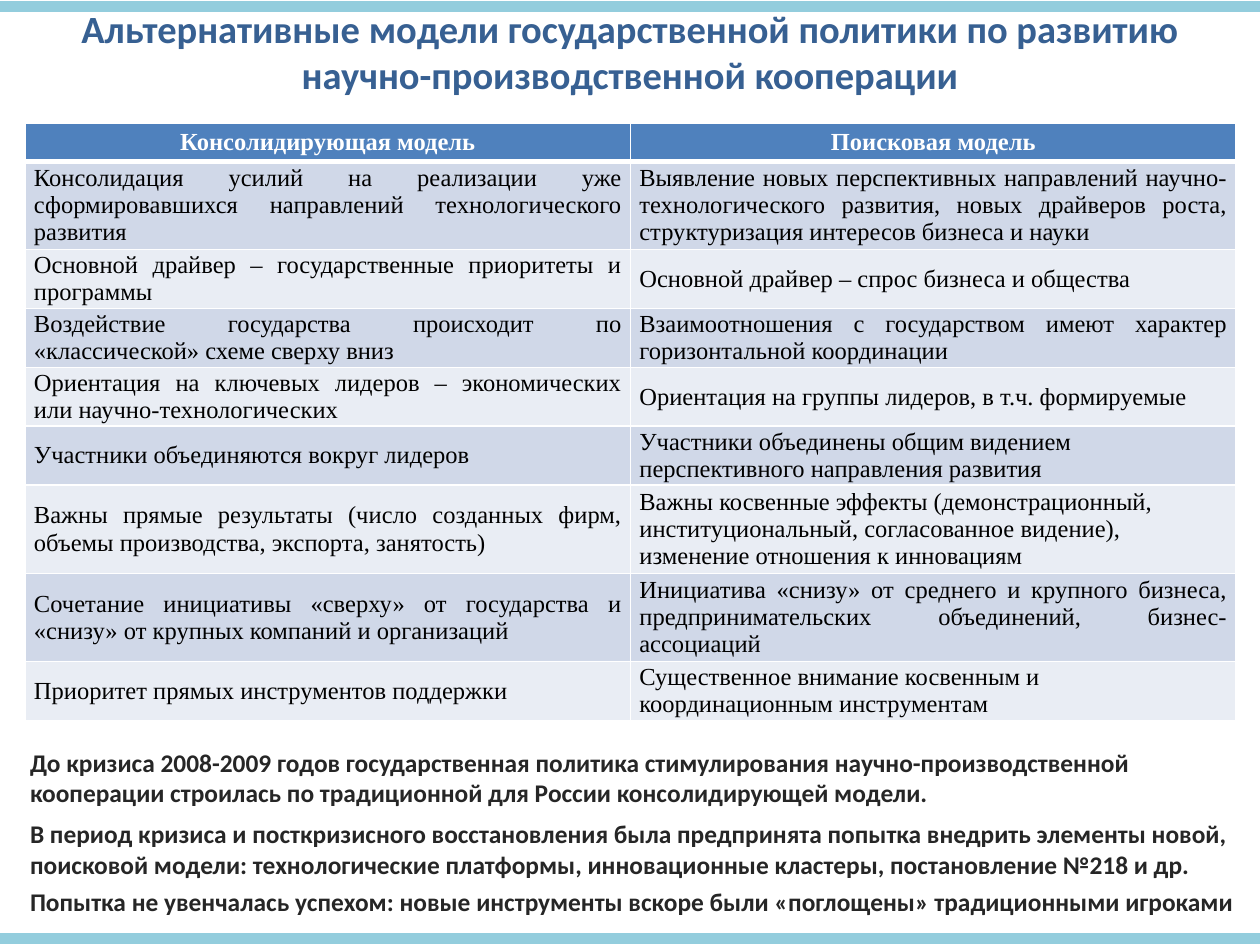
from lxml.etree import SubElement
from pptx import Presentation
from pptx.dml.color import RGBColor
from pptx.enum.shapes import MSO_CONNECTOR
from pptx.enum.text import MSO_ANCHOR, PP_ALIGN
from pptx.oxml.ns import qn
from pptx.util import Inches, Pt

SERIF = "Times New Roman"
LEFT, MID, JUST = PP_ALIGN.LEFT, PP_ALIGN.CENTER, PP_ALIGN.JUSTIFY
TITLE = ("Альтернативные модели государственной политики по развитию "
         "научно-производственной кооперации")
HEADS = ["Консолидирующая модель", "Поисковая модель"]
# Height, then text and alignment of the left and right cells
ROWS = [
    (0.67, "Консолидация усилий на реализации уже сформировавшихся направлений "
     "технологического развития", JUST,
     "Выявление новых перспективных направлений научно-технологического развития, "
     "новых драйверов роста, структуризация интересов бизнеса и науки", JUST),
    (0.45, "Основной драйвер – государственные приоритеты и программы", JUST,
     "Основной драйвер – спрос бизнеса и общества", JUST),
    (0.45, "Воздействие государства происходит по «классической» схеме сверху вниз", JUST,
     "Взаимоотношения с государством имеют характер горизонтальной координации", JUST),
    (0.45, "Ориентация на ключевых лидеров – экономических или научно-технологических", JUST,
     "Ориентация на группы лидеров, в т.ч. формируемые", LEFT),
    (0.45, "Участники объединяются вокруг лидеров", JUST,
     "Участники объединены общим видением перспективного направления развития", LEFT),
    (0.67, "Важны прямые результаты (число созданных фирм, объемы производства, "
     "экспорта, занятость)", JUST,
     "Важны косвенные эффекты (демонстрационный, институциональный, согласованное "
     "видение), изменение отношения к инновациям", LEFT),
    (0.67, "Сочетание инициативы «сверху» от государства и «снизу» от крупных компаний "
     "и организаций", JUST,
     "Инициатива «снизу» от среднего и крупного бизнеса, предпринимательских "
     "объединений, бизнес-ассоциаций", JUST),
    (0.45, "Приоритет прямых инструментов поддержки", LEFT,
     "Существенное внимание косвенным и координационным инструментам", LEFT),
]
NOTES = [
    ("До кризиса 2008-2009 годов государственная политика стимулирования "
     "научно-производственной кооперации строилась по традиционной для России "
     "консолидирующей модели.", None),
    ("В период кризиса и посткризисного восстановления была предпринята попытка внедрить "
     "элементы новой, поисковой модели: технологические платформы, инновационные "
     "кластеры, постановление №218 и др.", None),
    ("Попытка не увенчалась успехом: новые инструменты вскоре были «поглощены» "
     "традиционными игроками", 0.9),
]


def paint(hue):
    return RGBColor.from_string(hue)


def write(para, text, size=14, font="Calibri", hue="000000", bold=False,
          align=LEFT, before=0, pitch=None):
    para.alignment = align
    para.space_before = Pt(before)
    if pitch:
        para.line_spacing = pitch
    run = para.add_run()
    run.text = text
    run.font.size = Pt(size)
    run.font.name = font
    run.font.bold = bold
    run.font.color.rgb = paint(hue)


def add_box(slide, x, y, w, h):
    box = slide.shapes.add_textbox(Inches(x), Inches(y), Inches(w), Inches(h))
    box.text_frame.word_wrap = True
    return box.text_frame


def add_bar(slide, y):
    bar = slide.shapes.add_connector(
        MSO_CONNECTOR.STRAIGHT, 0, Inches(y), Inches(10), Inches(y))
    bar.line.color.rgb = paint("93CDDD")
    bar.line.width = Pt(6)
    SubElement(bar._element.spPr, qn("a:effectLst"))


def add_edge(cell, side, width):
    props = cell._tc.get_or_add_tcPr()
    edge = SubElement(props, qn("a:ln" + side), w=str(Pt(width)))
    fill = SubElement(edge, qn("a:solidFill"))
    SubElement(fill, qn("a:srgbClr"), val="FFFFFF")


def fill_cell(cell, text, fill, edges, **style):
    cell.margin_left = cell.margin_right = Inches(0.07)
    cell.margin_top = cell.margin_bottom = 0
    cell.vertical_anchor = MSO_ANCHOR.MIDDLE
    for side, width in zip("LRTB", edges):
        add_edge(cell, side, width)
    cell.fill.solid()
    cell.fill.fore_color.rgb = paint(fill)
    write(cell.text_frame.paragraphs[0], text, font=SERIF, **style)


def add_models(slide):
    table = slide.shapes.add_table(
        len(ROWS) + 1, 2, Inches(0.2), Inches(0.98), Inches(9.61), Inches(4.56)).table
    table.rows[0].height = Inches(0.3)
    for col, head in enumerate(HEADS):
        fill_cell(table.cell(0, col), head, "4F81BD", (1, 1, 1, 3),
                  hue="FFFFFF", bold=True, align=MID)
    for num, (high, left, lal, right, ral) in enumerate(ROWS, 1):
        table.rows[num].height = Inches(high)
        fill = "D0D8E8" if num % 2 else "E9EDF4"
        edges = (1, 1, 3 if num == 1 else 1, 1)
        fill_cell(table.cell(num, 0), left, fill, edges, align=lal)
        fill_cell(table.cell(num, 1), right, fill, edges, align=ral)


def add_notes(slide):
    frame = add_box(slide, 0.14, 5.88, 9.86, 1.47)
    for num, (text, pitch) in enumerate(NOTES):
        para = frame.add_paragraph() if num else frame.paragraphs[0]
        write(para, text, size=14.5, hue="262626", bold=True, before=6, pitch=pitch)


def main():
    deck = Presentation()
    deck.slide_width, deck.slide_height = Inches(10), Inches(7.5)
    slide = deck.slides.add_slide(deck.slide_layouts[6])
    title = add_box(slide, 0, -0.01, 10, 0.84)
    write(title.paragraphs[0], TITLE, size=22, hue="376092", bold=True, align=MID)
    add_bar(slide, 0.05)
    add_models(slide)
    add_notes(slide)
    add_bar(slide, 7.45)
    deck.save("out.pptx")


if __name__ == "__main__":
    main()
